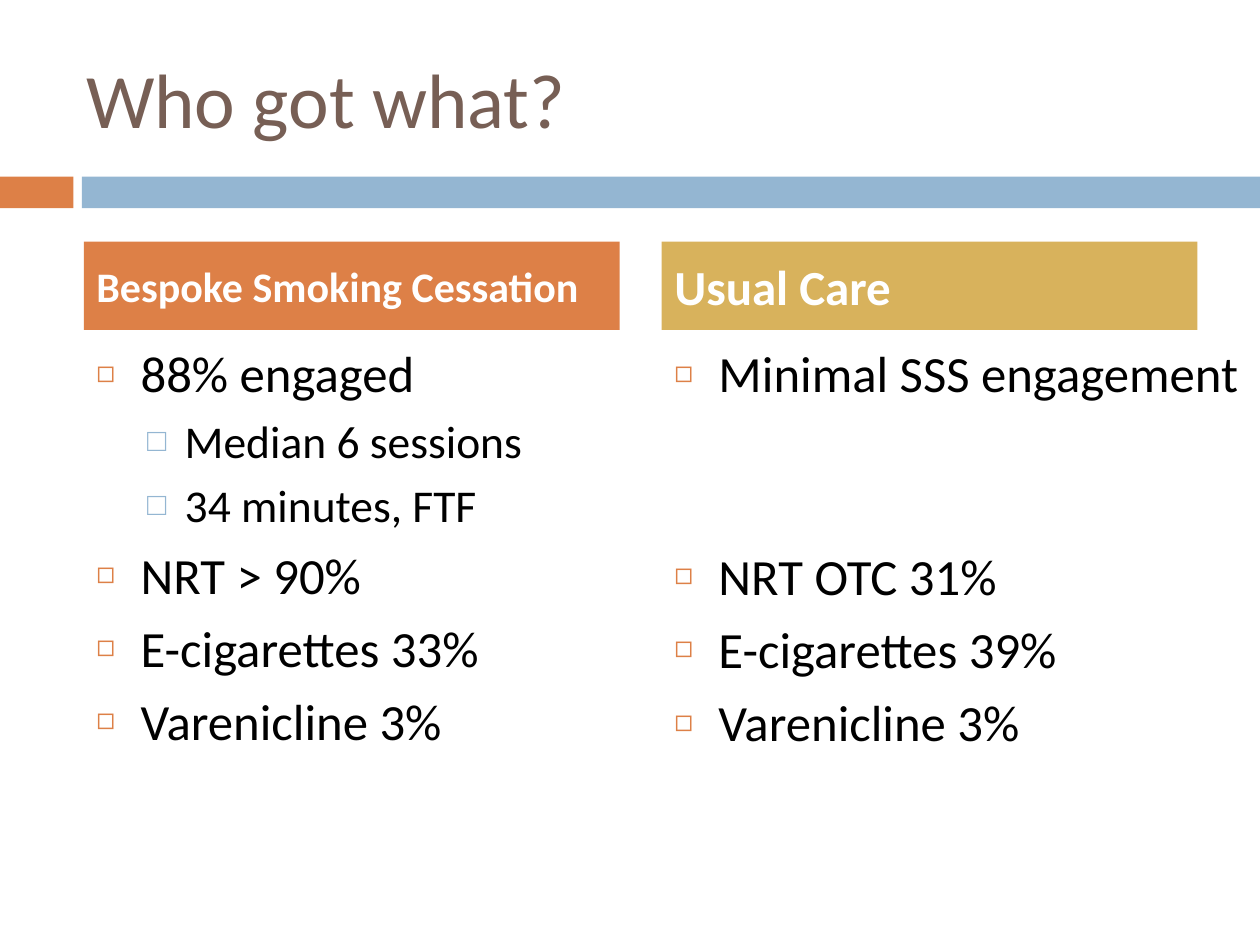
from lxml import etree
from pptx import Presentation
from pptx import util as u
from pptx.dml.color import RGBColor
from pptx.enum import shapes, text
from pptx.oxml.ns import qn

ORANGE, BLUE, GOLD = "DD8047", "94B6D2", "D8B25C"
BROWN, BLACK, WHITE = "775F55", "000000", "FFFFFF"

TITLE = "Who got what?"
# Points are (level, wording, space before in points); None is the level's own.
COLUMNS = [
    dict(heading="Bespoke Smoking Cessation", size=24, fill=ORANGE, width=10.8,
         points=[(0, "88% engaged", None), (1, "Median 6 sessions", None),
                 (1, "34 minutes, FTF", None), (0, "NRT > 90%", None),
                 (0, "E-cigarettes 33%", None), (0, "Varenicline 3%", None)]),
    dict(heading="Usual Care", size=28, fill=GOLD, width=12.06,
         points=[(0, "Minimal SSS engagement", None), (0, "NRT OTC 31%", 81),
                 (0, "E-cigarettes 39%", None), (0, "Varenicline 3%", None)]),
]
LEVELS = [
    dict(size=29, before=7, left=0.89, hang=0.89, bullet=("◻", ORANGE, 60)),
    dict(size=26, before=5.5, left=1.78, hang=0.76, bullet=("□", BLUE, 70)),
]

COLUMN_LEFT, COLUMN_STEP, HEADING_WIDTH = 1.69, 11.65, 10.8
HEADING_TOP, HEADING_HEIGHT = 4.87, 1.78
POINTS_TOP, POINTS_HEIGHT = 6.77, 9.95
BAND_TOP, BAND_HEIGHT = 3.56, 0.64
BANDS = [(0, 1.48, ORANGE), (1.65, 23.75, BLUE)]


def rgb(color):
    return RGBColor.from_string(color)


def place(shape, left, top, width, height):
    shape.left, shape.top = u.Cm(left), u.Cm(top)
    shape.width, shape.height = u.Cm(width), u.Cm(height)


def fill(shape, color):
    shape.fill.solid()
    shape.fill.fore_color.rgb = rgb(color)


def prepare_frame(shape, anchor):
    frame = shape.text_frame
    frame.auto_size = text.MSO_AUTO_SIZE.NONE
    frame.word_wrap = True
    frame.vertical_anchor = anchor
    return frame


def write(paragraph, wording, size, color=BLACK, bold=False, before=0,
          left=0, hang=0, bullet=None):
    paragraph.alignment = text.PP_ALIGN.LEFT
    paragraph.space_before = u.Pt(before)
    run = paragraph.add_run()
    run.text = wording
    run.font.name, run.font.size, run.font.bold = "Calibri", u.Pt(size), bold
    run.font.color.rgb = rgb(color)
    properties = paragraph._p.get_or_add_pPr()
    properties.set("marL", str(u.Cm(left)))
    properties.set("indent", str(-u.Cm(hang)))
    if bullet:
        mark, mark_color, percent = bullet
        holder = etree.SubElement(properties, qn("a:buClr"))
        etree.SubElement(holder, qn("a:srgbClr"), val=mark_color)
        etree.SubElement(properties, qn("a:buSzPct"), val=str(percent * 1000))
        etree.SubElement(properties, qn("a:buChar"), char=mark)


def write_points(frame, points):
    for number, (level, wording, before) in enumerate(points):
        paragraph = frame.add_paragraph() if number else frame.paragraphs[0]
        paragraph.level = level
        style = dict(LEVELS[level])
        if before is not None:
            style["before"] = before
        write(paragraph, wording, **style)


def main():
    deck = Presentation()
    deck.slide_width, deck.slide_height = u.Cm(25.4), u.Cm(19.05)
    slide = deck.slides.add_slide(deck.slide_layouts.get_by_name("Comparison"))
    title, *bodies = slide.placeholders

    for left, width, color in BANDS:
        band = slide.shapes.add_shape(
            shapes.MSO_SHAPE.RECTANGLE, u.Cm(left), u.Cm(BAND_TOP),
            u.Cm(width), u.Cm(BAND_HEIGHT))
        band.shadow.inherit = False
        band.line.fill.background()
        fill(band, color)

    place(title, 1.48, 0.76, 22.56, 2.41)
    frame = prepare_frame(title, text.MSO_ANCHOR.MIDDLE)
    write(frame.paragraphs[0], TITLE, 44, BROWN)

    for number, column in enumerate(COLUMNS):
        heading, points = bodies[2 * number:2 * number + 2]
        left = COLUMN_LEFT + number * COLUMN_STEP
        place(heading, left, HEADING_TOP, HEADING_WIDTH, HEADING_HEIGHT)
        fill(heading, column["fill"])
        frame = prepare_frame(heading, text.MSO_ANCHOR.MIDDLE)
        write(frame.paragraphs[0], column["heading"], column["size"], WHITE,
              bold=True, before=7)
        place(points, left, POINTS_TOP, column["width"], POINTS_HEIGHT)
        write_points(prepare_frame(points, text.MSO_ANCHOR.TOP), column["points"])

    deck.save("out.pptx")


if __name__ == "__main__":
    main()
